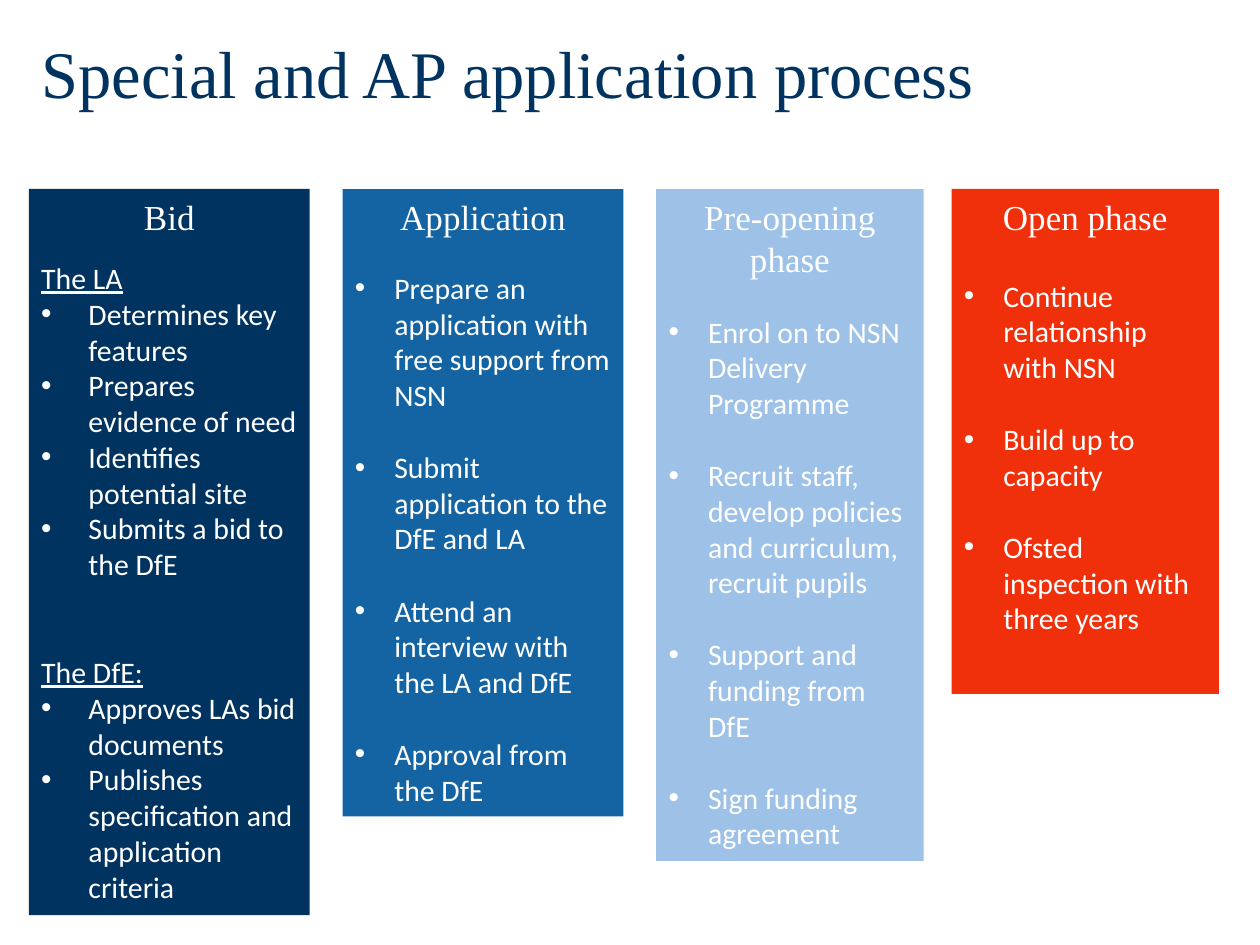
from dataclasses import dataclass

import pptx
import pptx.dml.color
import pptx.enum.shapes
import pptx.enum.text
import pptx.util
from lxml import etree

Pt = pptx.util.Pt
RGBColor = pptx.dml.color.RGBColor
ALIGN = pptx.enum.text.PP_ALIGN
ANCHOR = pptx.enum.text.MSO_ANCHOR

NAVY = RGBColor(0x00, 0x33, 0x5F)
BLUE = RGBColor(0x14, 0x64, 0xA3)
PALE_BLUE = RGBColor(0x9E, 0xC1, 0xE7)
RED = RGBColor(0xF0, 0x30, 0x0A)
WHITE = RGBColor(0xFF, 0xFF, 0xFF)

TITLE_FORMAT = {"name": "Times New Roman", "size": Pt(38)}
HEADING_FORMAT = {"name": "Times New Roman", "size": Pt(20)}
BODY_FORMAT = {"name": "Calibri", "size": Pt(17)}
PARTY_FORMAT = BODY_FORMAT | {"underline": True}

TOP = 108
BLANK_LINE = 20.75


@dataclass
class Group:
    bullets: list[str]
    space_before: float
    party: str = ""


@dataclass
class Phase:
    heading: str
    left: float
    width: float
    height: float
    fill: RGBColor
    indent: float
    bullet_gap: float
    groups: list[Group]


PHASES = [
    Phase("Bid", 16.5, 160.5, 415, NAVY, 27, 0, [
        Group(["Determines key features", "Prepares evidence of need",
               "Identifies potential site", "Submits a bid to the DfE"],
              13, "The LA"),
        Group(["Approves LAs bid documents",
               "Publishes specification and application criteria"],
              2 * BLANK_LINE, "The DfE:"),
    ]),
    Phase("Application", 195.75, 160.5, 358.5, BLUE, 22.5, BLANK_LINE, [
        Group(["Prepare an application with free support from NSN",
               "Submit application to the DfE and LA",
               "Attend an interview with the LA and DfE",
               "Approval from the DfE"], 18.5),
    ]),
    Phase("Pre-opening phase", 375, 152.75, 384, PALE_BLUE, 22.5, BLANK_LINE, [
        Group(["Enrol on to NSN Delivery Programme",
               "Recruit staff, develop policies and curriculum, recruit pupils",
               "Support and funding from DfE",
               "Sign funding agreement"], 19.5),
    ]),
    Phase("Open phase", 543.75, 152.75, 288.5, RED, 22.5, BLANK_LINE, [
        Group(["Continue relationship with NSN",
               "Build up to capacity",
               "Ofsted inspection with three years"], 23),
    ]),
]


def write_span(paragraph, text: str, values: dict, color: RGBColor) -> None:
    span = paragraph.add_run()
    span.text = text
    for name, value in values.items():
        setattr(span.font, name, value)
    span.font.color.rgb = color


def add_line(frame, text: str, values: dict, space_before: float, indent: float = 0) -> None:
    paragraph = frame.add_paragraph()
    paragraph.alignment = ALIGN.LEFT
    paragraph.space_before = Pt(space_before)
    if indent:
        properties = paragraph._p.get_or_add_pPr()
        properties.set("marL", str(Pt(indent)))
        properties.set("indent", str(-Pt(indent)))
        namespace = properties.nsmap["a"]
        etree.SubElement(properties, f"{{{namespace}}}buFont", typeface="Arial")
        etree.SubElement(properties, f"{{{namespace}}}buChar", char="•")
    write_span(paragraph, text, values, WHITE)


def add_phase(page, phase: Phase) -> None:
    box = page.shapes.add_shape(
        pptx.enum.shapes.MSO_SHAPE.RECTANGLE,
        Pt(phase.left), Pt(TOP), Pt(phase.width), Pt(phase.height))
    box.shadow.inherit = False
    box.fill.solid()
    box.fill.fore_color.rgb = phase.fill
    box.line.fill.background()

    frame = box.text_frame
    frame.word_wrap = True
    frame.vertical_anchor = ANCHOR.TOP
    heading = frame.paragraphs[0]
    heading.alignment = ALIGN.CENTER
    write_span(heading, phase.heading, HEADING_FORMAT, WHITE)

    for group in phase.groups:
        gap = group.space_before
        if group.party:
            add_line(frame, group.party, PARTY_FORMAT, gap)
            gap = phase.bullet_gap
        for bullet in group.bullets:
            add_line(frame, bullet, BODY_FORMAT, gap, phase.indent)
            gap = phase.bullet_gap


def add_title(page, text: str) -> None:
    title = page.shapes.title
    title.left, title.top, title.width, title.height = Pt(16.5), Pt(20), Pt(680.5), Pt(65)
    frame = title.text_frame
    frame.word_wrap = True
    frame.auto_size = pptx.enum.text.MSO_AUTO_SIZE.NONE
    frame.vertical_anchor = ANCHOR.TOP
    paragraph = frame.paragraphs[0]
    paragraph.alignment = ALIGN.LEFT
    paragraph.line_spacing = 0.9
    write_span(paragraph, text, TITLE_FORMAT, NAVY)


def main() -> None:
    deck = pptx.Presentation()
    deck.slide_width, deck.slide_height = Pt(720), Pt(540)
    page = deck.slides.add_slide(deck.slide_layouts.get_by_name("Title Only"))

    # Title
    add_title(page, "Special and AP application process")

    # One column for each phase
    for phase in PHASES:
        add_phase(page, phase)

    deck.save("out.pptx")


if __name__ == "__main__":
    main()
